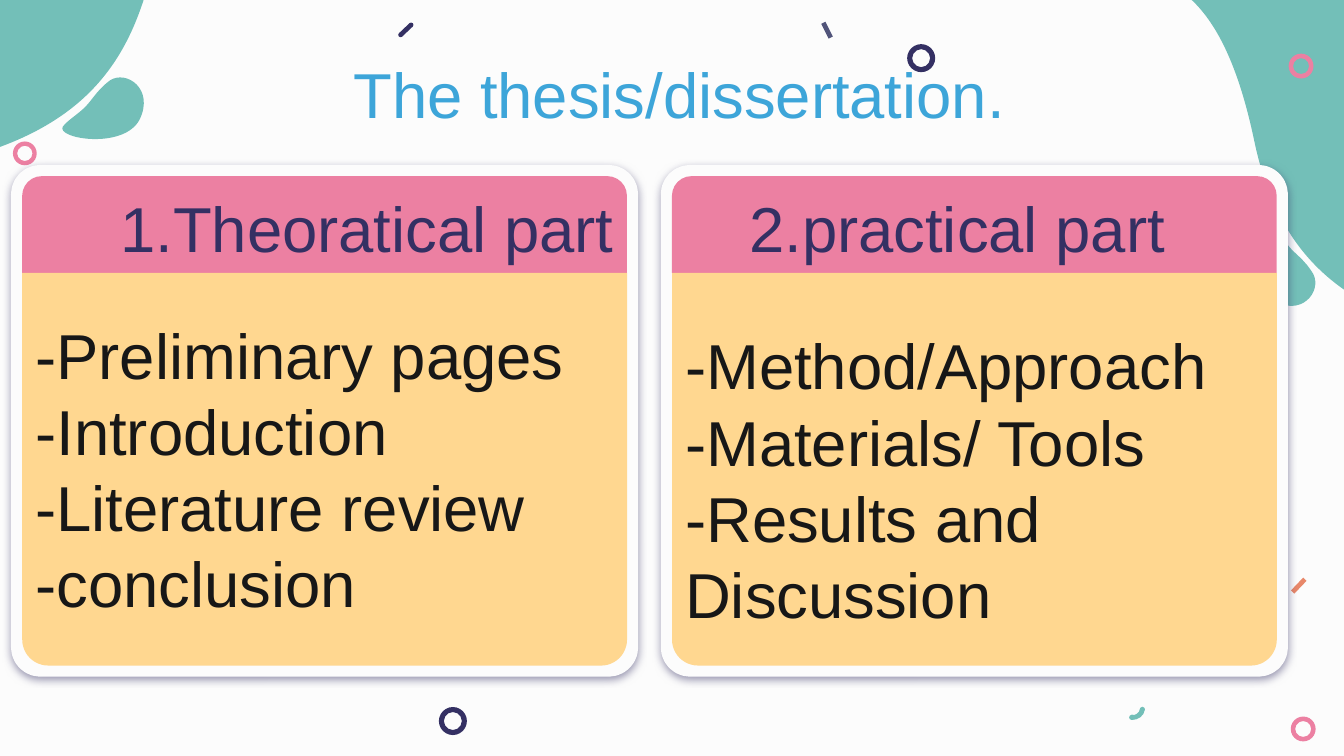
from itertools import chain

from lxml import etree
from pptx import Presentation
from pptx.dml.color import RGBColor
from pptx.enum.shapes import MSO_CONNECTOR, MSO_SHAPE
from pptx.enum.text import MSO_ANCHOR, PP_ALIGN
from pptx.oxml.ns import qn
from pptx.util import Cm, Pt

DONUT = MSO_SHAPE.DONUT
ROUNDED = MSO_SHAPE.ROUNDED_RECTANGLE
ROUNDED_TOP = MSO_SHAPE.ROUND_2_SAME_RECTANGLE
STRAIGHT = MSO_CONNECTOR.STRAIGHT
TOP, MIDDLE = MSO_ANCHOR.TOP, MSO_ANCHOR.MIDDLE
LEFT, CENTER, RIGHT = PP_ALIGN.LEFT, PP_ALIGN.CENTER, PP_ALIGN.RIGHT

FONT = "Arial"
TEXT_SIZE = 34
PAPER, TEAL, PINK, NAVY = "FCFCFC", "73BFB8", "EC80A2", "343063"
SAND, SLATE, ORANGE, BLUE, INK = "FFD790", "51547A", "E8886A", "3DA5D9", "171717"
SLIDE_WIDTH, SLIDE_HEIGHT = 25.4, 14.29
CARD_TOP, CARD_WIDTH, CARD_HEIGHT = 3.33, 11.43, 9.25
HEADER_HEIGHT = 1.83
INSET = 0.25

# Each outline: start point, curves of (control, control, end), closing corners.
OUTLINES = [
    ((20.45, -0.38),
     [((22.25, -0.89), (23.19, 0.23), (23.7, 2.64)),
      ((24.41, 6.07), (26.9, 6.22), (30.2, 7.04)),
      ((32.66, 7.62), (32.46, 9.96), (32.46, 9.96))],
     [(35.99, -3.25), (22.2, -6.96)]),
    ((24.03, 4.22),
     [((23.83, 4.04), (23.5, 5.33), (24.03, 5.66)),
      ((24.59, 6.02), (24.99, 5.51), (24.82, 5.18)),
      ((24.64, 4.88), (24.46, 4.8), (24.33, 4.62)),
      ((24.21, 4.45), (24.16, 4.32), (24.03, 4.22))],
     []),
    ((-3.05, 6.43),
     [((-3.73, 4.67), (-2.69, 3.63), (-0.36, 2.9)),
      ((3.02, 1.85), (2.92, -0.66), (3.38, -4.01)),
      ((3.73, -6.5), (6.1, -6.55), (6.1, -6.55))],
     [(-7.42, -8.79), (-9.75, 5.31)]),
    ((1.19, 2.39),
     [((1.04, 2.62), (2.34, 2.84), (2.64, 2.26)),
      ((2.92, 1.68), (2.39, 1.32), (2.08, 1.52)),
      ((1.8, 1.73), (1.73, 1.93), (1.55, 2.08)),
      ((1.4, 2.21), (1.27, 2.29), (1.19, 2.39))],
     []),
    ((21.59, 13.36),
     [((21.56, 13.36), (21.54, 13.39), (21.54, 13.41)),
      ((21.54, 13.46), (21.46, 13.54), (21.39, 13.51)),
      ((21.36, 13.51), (21.34, 13.54), (21.34, 13.56)),
      ((21.34, 13.59), (21.36, 13.61), (21.39, 13.61)),
      ((21.51, 13.61), (21.62, 13.54), (21.64, 13.41)),
      ((21.64, 13.39), (21.62, 13.36), (21.59, 13.36))],
     []),
]
# Centre x, centre y, diameter, colour
RINGS = [
    (0.47, 2.9, 0.45, PINK),
    (24.59, 1.25, 0.47, PINK),
    (24.63, 13.78, 0.47, PINK),
    (17.41, 1.1, 0.53, NAVY),
    (8.56, 13.63, 0.53, NAVY),
]
# Start, end, colour, line cap
DASHES = [
    ((15.56, 0.43), (15.7, 0.71), SLATE, "flat"),
    ((24.43, 11.19), (24.66, 10.95), ORANGE, "flat"),
    ((7.57, 0.66), (7.77, 0.47), NAVY, "rnd"),
]


def color(hex_code):
    return RGBColor.from_string(hex_code)


def lengths(*values):
    return [Cm(value) for value in values]


def paint(shape, fill):
    shape.fill.solid()
    shape.fill.fore_color.rgb = color(fill)
    shape.line.fill.background()
    shape.shadow.inherit = False


def add_filled(slide, kind, box, fill, adjustments):
    shape = slide.shapes.add_shape(kind, *lengths(*box))
    paint(shape, fill)
    for index, value in enumerate(adjustments):
        shape.adjustments[index] = value
    return shape


def write(shape, text, ink=INK, align=LEFT, anchor=MIDDLE, right_inset=INSET):
    frame = shape.text_frame
    frame.word_wrap = True
    frame.vertical_anchor = anchor
    frame.margin_left = frame.margin_top = frame.margin_bottom = Cm(INSET)
    frame.margin_right = Cm(right_inset)
    frame.text = text
    for paragraph in frame.paragraphs:
        paragraph.alignment = align
        paragraph.line_spacing = 1.0
        paragraph.font.name = FONT
        paragraph.font.size = Pt(TEXT_SIZE)
        paragraph.font.color.rgb = color(ink)


def bend(shape, curve_count):
    """Turn each leading group of three straight segments into one cubic curve."""
    segments = list(shape._element.iter(qn("a:lnTo")))[:3 * curve_count]
    for index in range(0, len(segments), 3):
        curve = etree.Element(qn("a:cubicBezTo"))
        segments[index].addprevious(curve)
        for segment in segments[index:index + 3]:
            curve.append(segment[0])
            segment.getparent().remove(segment)


def add_outline(slide, start, curves, corners):
    builder = slide.shapes.build_freeform(*lengths(*start))
    points = chain(*curves, corners)
    builder.add_line_segments([lengths(*point) for point in points], close=True)
    shape = builder.convert_to_shape()
    bend(shape, len(curves))
    paint(shape, TEAL)


def add_dash(slide, start, end, ink, cap):
    dash = slide.shapes.add_connector(STRAIGHT, *lengths(*start, *end))
    dash.line.color.rgb = color(ink)
    dash.line.width = Pt(2.5)
    dash.line._get_or_add_ln().set("cap", cap)
    etree.SubElement(dash._element.spPr, qn("a:effectLst"))


def add_decoration(slide):
    for outline in OUTLINES:
        add_outline(slide, *outline)
    for x, y, size, fill in RINGS:
        box = (x - size / 2, y - size / 2, size, size)
        add_filled(slide, DONUT, box, fill, [0.18])
    for dash in DASHES:
        add_dash(slide, *dash)


def add_soft_shadow(shape):
    effects = shape._element.spPr.find(qn("a:effectLst"))
    shadow = etree.SubElement(
        effects, qn("a:outerShdw"), blurRad=str(Pt(4.5)), dist=str(Pt(1.5)),
        dir="5400000", algn="bl", rotWithShape="0")
    tint = etree.SubElement(shadow, qn("a:srgbClr"), val=NAVY)
    etree.SubElement(tint, qn("a:alpha"), val="50000")


def add_card(slide, box, heading, items, heading_inset, items_offset):
    left, top, width, height = box
    body_top, body_height = top + HEADER_HEIGHT, height - HEADER_HEIGHT
    frame = add_filled(slide, ROUNDED, box, PAPER, [0.037])
    frame.line.color.rgb = color(PAPER)
    frame.line.width = Pt(12)
    add_soft_shadow(frame)
    add_filled(slide, ROUNDED_TOP, (left, top, width, HEADER_HEIGHT), PINK, [0.203, 0])
    body = add_filled(slide, ROUNDED_TOP, (left, body_top, width, body_height),
                      SAND, [0.066, 0])
    body.rotation = 180
    heading_box = slide.shapes.add_textbox(*lengths(left, top + 0.23, width, 1.47))
    write(heading_box, heading, ink=NAVY, align=RIGHT, right_inset=heading_inset)
    items_box = slide.shapes.add_textbox(
        *lengths(left, body_top + items_offset, 12.27, 6.78))
    write(items_box, "\n".join(items))


def add_title(slide, box):
    title = slide.shapes.title
    title.left, title.top, title.width, title.height = lengths(*box)
    write(title, "The thesis/dissertation.", ink=BLUE, align=CENTER, anchor=TOP)


def main():
    presentation = Presentation()
    presentation.slide_width, presentation.slide_height = lengths(SLIDE_WIDTH, SLIDE_HEIGHT)
    slide = presentation.slides.add_slide(presentation.slide_layouts[5])
    slide.background.fill.solid()
    slide.background.fill.fore_color.rgb = color(PAPER)

    add_decoration(slide)
    add_title(slide, (2.11, 0.79, 21.46, 1.6))
    add_card(slide, (0.42, CARD_TOP, CARD_WIDTH, CARD_HEIGHT), "1.Theoratical part",
             ["-Preliminary pages", "-Introduction", "-Literature review", "-conclusion"],
             heading_inset=INSET, items_offset=0.3)
    add_card(slide, (12.7, CARD_TOP, CARD_WIDTH, CARD_HEIGHT), "2.practical part",
             ["-Method/Approach", "-Materials/ Tools", "-Results and Discussion"],
             heading_inset=2.11, items_offset=0.5)
    presentation.save("out.pptx")


if __name__ == "__main__":
    main()
